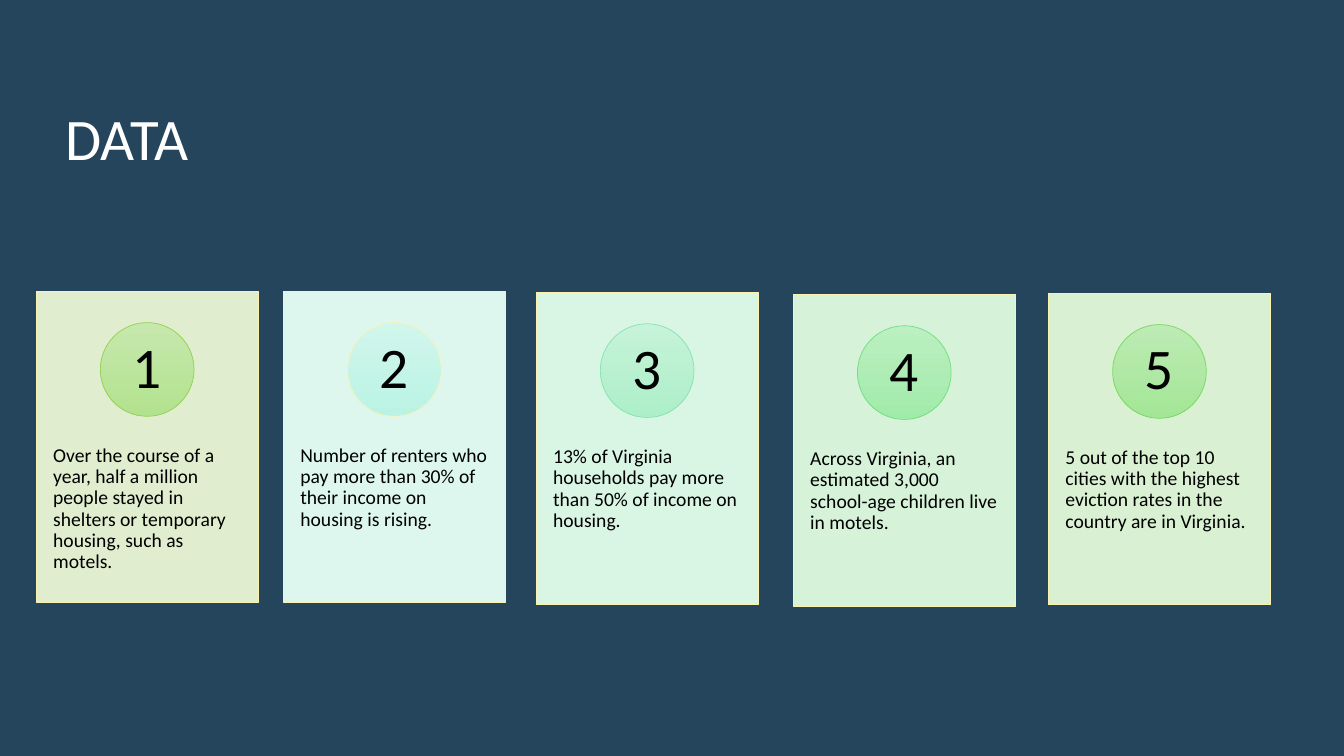
from pptx import Presentation
from pptx import util as u
from pptx.dml.color import RGBColor
from pptx.enum import shapes, text

NAVY = RGBColor(0x24, 0x45, 0x5C)
WHITE = RGBColor(0xFF, 0xFF, 0xFF)
BLACK = RGBColor(0, 0, 0)
CREAM = RGBColor(0xFB, 0xF2, 0xB0)
LIME = [RGBColor.from_string(c) for c in ("E0EDCF", "C7E8AD", "B3E28E", "93D251")]
AQUA = [RGBColor.from_string(c) for c in ("DDF7EF", "D1F6EC", "BAF3E4", "FBF2B0")]
MINT = [RGBColor.from_string(c) for c in ("D9F5E4", "C6F3D9", "ADEFC8", "85E4AF")]
GREEN = [RGBColor.from_string(c) for c in ("D6F2D8", "BCEFC2", "A1EBA9", "73DE81")]
LEAF = [RGBColor.from_string(c) for c in ("D9F0D2", "BDEBB4", "A3E696", "79D862")]

CARD_W, CARD_H = 5.6, 7.85
DISC = 2.36
DROP = 0.79

# left, top, colours (card, disc top, disc bottom, disc edge), wording
FACTS = [
    (0.91, 7.34, LIME, "Over the course of a year, half a million people stayed in "
                       "shelters or temporary housing, such as motels."),
    (7.14, 7.34, AQUA, "Number of renters who pay more than 30% of their income on "
                       "housing is rising."),
    (13.51, 7.37, MINT, "13% of Virginia households pay more than 50% of income on "
                        "housing."),
    (19.99, 7.42, GREEN, "Across Virginia, an estimated 3,000 school-age children live "
                         "in motels."),
    (26.42, 7.39, LEAF, "5 out of the top 10 cities with the highest eviction rates in "
                        "the country are in Virginia."),
]


class Deck:
    font = "Calibri"

    def __init__(self):
        self.prs = Presentation()
        self.prs.slide_width, self.prs.slide_height = u.Cm(33.87), u.Cm(19.05)
        self.slide = self.prs.slides.add_slide(self.prs.slide_layouts[5])
        fill = self.slide.background.fill
        fill.solid()
        fill.fore_color.rgb = NAVY

    def label(self, shape, words, size, color, align, anchor, pads):
        """Put one run in a shape; pads are left, top, right, bottom in cm."""
        frame = shape.text_frame
        frame.word_wrap = True
        frame.auto_size = text.MSO_AUTO_SIZE.NONE
        frame.vertical_anchor = anchor
        (frame.margin_left, frame.margin_top,
         frame.margin_right, frame.margin_bottom) = [u.Cm(p) for p in pads]
        para = frame.paragraphs[0]
        para.alignment = align
        para.line_spacing = 0.9
        run = para.add_run()
        run.text = words
        run.font.name = self.font
        run.font.size = u.Pt(size)
        run.font.color.rgb = color

    def title(self, words):
        head = self.slide.shapes.title
        head.left, head.top = u.Cm(1.4), u.Cm(2.64)
        head.width, head.height = u.Cm(25.7), u.Cm(2.82)
        self.label(head, words, 42, WHITE, text.PP_ALIGN.LEFT,
                   text.MSO_ANCHOR.TOP, (0.25, 0.13, 0.25, 0.13))

    def shape(self, kind, left, top, width, height, edge):
        item = self.slide.shapes.add_shape(
            kind, u.Cm(left), u.Cm(top), u.Cm(width), u.Cm(height))
        item.shadow.inherit = False
        item.line.color.rgb = edge
        item.line.width = u.Pt(0.5)
        return item

    def card(self, left, top, color, words):
        box = self.shape(shapes.MSO_SHAPE.RECTANGLE, left, top, CARD_W, CARD_H, CREAM)
        box.fill.solid()
        box.fill.fore_color.rgb = color
        self.label(box, words, 14, BLACK, text.PP_ALIGN.LEFT,
                   text.MSO_ANCHOR.TOP, (0.43, 3.89, 0.43, 1.07))

    def disc(self, left, top, upper, lower, edge, words):
        dot = self.shape(shapes.MSO_SHAPE.OVAL, left, top, DISC, DISC, edge)
        dot.fill.gradient()
        dot.fill.gradient_angle = 270
        for stop, color in zip(dot.fill.gradient_stops, (upper, lower)):
            stop.color.rgb = color
        self.label(dot, words, 41, BLACK, text.PP_ALIGN.CENTER,
                   text.MSO_ANCHOR.MIDDLE, (0, 0, 0, 0))


def main():
    deck = Deck()
    deck.title("DATA")
    for num, (left, top, (base, upper, lower, edge), words) in enumerate(FACTS, 1):
        deck.card(left, top, base, words)
        deck.disc(left + (CARD_W - DISC) / 2, top + DROP, upper, lower, edge, str(num))
    deck.prs.save("out.pptx")


if __name__ == "__main__":
    main()
